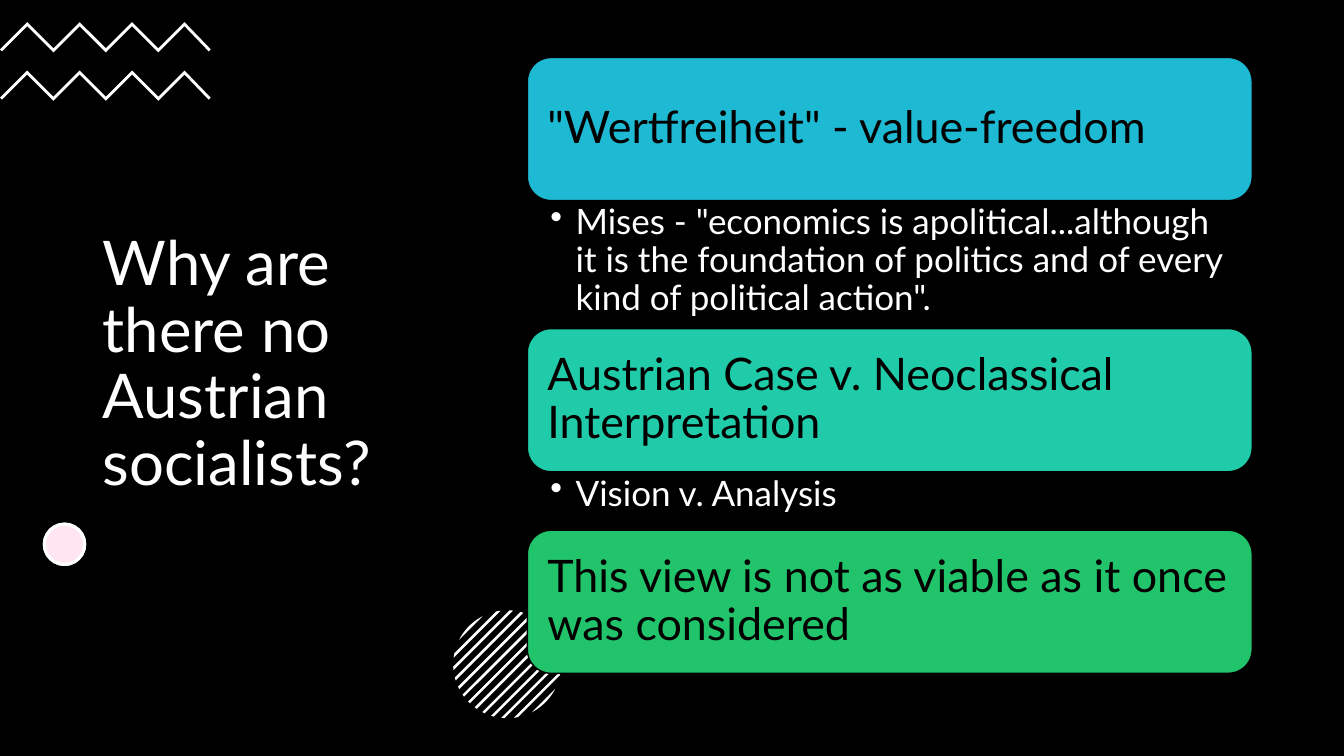
from dataclasses import dataclass
from math import sqrt

from lxml import etree
from pptx import Presentation
from pptx.dml.color import RGBColor
from pptx.enum.shapes import MSO_SHAPE
from pptx.enum.text import MSO_ANCHOR, PP_ALIGN
from pptx.oxml.ns import qn
from pptx.util import Inches, Pt

ELLIPSE = MSO_SHAPE.OVAL
ROUNDED = MSO_SHAPE.ROUNDED_RECTANGLE
TOP = MSO_ANCHOR.TOP
MIDDLE = MSO_ANCHOR.MIDDLE
LEFT = PP_ALIGN.LEFT


@dataclass(frozen=True)
class Theme:
    """Colours, font and type sizes of the slide."""
    font: str = "Lato"
    black: str = "000000"
    white: str = "FFFFFF"
    pink: str = "FF80BD"
    cards: tuple = ("1EB9D3", "20CBA9", "21C46B")
    title_size: int = 44
    card_size: int = 32
    detail_size: int = 25


def write_text(shape, text, size, color, font, anchor=MIDDLE, insets=(0.1, 0.05, 0.1, 0.05), bullet=False):
    """Fill a shape with one formatted paragraph."""
    frame = shape.text_frame
    frame.word_wrap = True
    frame.vertical_anchor = anchor
    frame.margin_left, frame.margin_top, frame.margin_right, frame.margin_bottom = map(Inches, insets)
    paragraph = frame.paragraphs[0]
    paragraph.alignment = LEFT
    paragraph.line_spacing = 0.9
    run = paragraph.add_run()
    run.text = text
    run.font.name = font
    run.font.size = Pt(size)
    run.font.color.rgb = RGBColor.from_string(color)
    if bullet:
        properties = paragraph._p.get_or_add_pPr()
        properties.set("marL", str(Inches(0.25)))
        properties.set("indent", str(-Inches(0.25)))
        etree.SubElement(properties, qn("a:buChar"), char="•")


class SlideBuilder:
    """Draws the kinds of element used on the slide."""

    def __init__(self, slide, theme):
        """Keep the slide and theme and paint the background."""
        self.slide = slide
        self.theme = theme
        background = slide.background.fill
        background.solid()
        background.fore_color.rgb = RGBColor.from_string(theme.black)

    def paint(self, shape, fill, line=None, width=1, opacity=100):
        """Set the fill and outline of a shape."""
        shape.shadow.inherit = False
        shape.fill.solid()
        shape.fill.fore_color.rgb = RGBColor.from_string(fill)
        if opacity < 100:
            color = shape.fill._xPr.find(qn("a:solidFill"))[0]
            etree.SubElement(color, qn("a:alpha"), val=str(opacity * 1000))
        if line:
            shape.line.color.rgb = RGBColor.from_string(line)
            shape.line.width = Pt(width)
        else:
            shape.line.fill.background()

    def text(self, box, text, size, **text_format):
        """Add a white text box."""
        shape = self.slide.shapes.add_textbox(*map(Inches, box))
        write_text(shape, text, size, self.theme.white, self.theme.font, **text_format)

    def card(self, box, text, fill):
        """Add a rounded heading card."""
        shape = self.slide.shapes.add_shape(ROUNDED, *map(Inches, box))
        self.paint(shape, fill, self.theme.black)
        write_text(shape, text, self.theme.card_size, self.theme.black, self.theme.font, insets=(0.13,) * 4)

    def dot(self, box, fill, opacity=100):
        """Add a circle with a white outline."""
        shape = self.slide.shapes.add_shape(ELLIPSE, *map(Inches, box))
        self.paint(shape, fill, self.theme.white, 2.25, opacity)

    def polygon(self, points):
        """Add a closed white outline."""
        corners = [(Inches(x), Inches(y)) for x, y in points]
        builder = self.slide.shapes.build_freeform(*corners[0], scale=1.0)
        builder.add_line_segments(corners[1:], close=True)
        self.paint(builder.convert_to_shape(), self.theme.white)

    def zigzag(self, top):
        """Add a band of four peaks."""
        def edge(inset, end, drop):
            middle = [(0.01 + 0.26 * i, top + drop + (0 if i % 2 else 0.26)) for i in range(1, 8)]
            return [(inset, top + end), *middle, (2.09 - inset, top + end)]
        self.polygon(edge(0, 0.27, 0) + edge(0.02, 0.29, 0.04)[::-1])

    def striped_circle(self, center_x, center_y, radius):
        """Add diagonal stripes clipped to a circle."""
        limit = radius * sqrt(2)
        pitch, half_width, steps = 0.123, 0.018, 6
        for stripe in range(-6, 7):
            start = max(-limit, stripe * pitch - half_width)
            end = min(limit, stripe * pitch + half_width)
            upper, lower = [], []
            for step in range(steps + 1):
                shift = (start + (end - start) * step / steps) / 2
                reach = sqrt(max(0, radius ** 2 / 2 - shift ** 2))
                upper.append((center_x + shift + reach, center_y + shift - reach))
                lower.append((center_x + shift - reach, center_y + shift + reach))
            self.polygon(upper + lower[::-1])


def main():
    """Build and save the slide."""
    presentation = Presentation()
    presentation.slide_width = Inches(13.33)
    presentation.slide_height = Inches(7.5)
    theme = Theme()
    builder = SlideBuilder(presentation.slides.add_slide(presentation.slide_layouts[6]), theme)

    builder.text((0.92, 1.31, 3.5, 4.63), "Why are there no Austrian socialists?", theme.title_size)
    for top in (0.22, 0.7):
        builder.zigzag(top)
    for color, opacity in ((theme.white, 100), (theme.pink, 20)):
        builder.dot((0.44, 5.2, 0.4, 0.4), color, opacity)
    builder.striped_circle(5.03, 6.59, 0.535)

    sections = (
        ('"Wertfreiheit" - value-freedom',
         'Mises - "economics is apolitical...although it is the foundation of politics '
         'and of every kind of political action".', 1.27),
        ("Austrian Case v. Neoclassical Interpretation", "Vision v. Analysis", 0.58),
        ("This view is not as viable as it once was considered", None, 0),
    )
    left, top, width, card_height = 5.23, 0.57, 7.19, 1.42
    for (heading, detail, detail_height), fill in zip(sections, theme.cards):
        builder.card((left, top, width, card_height), heading, fill)
        top += card_height
        if detail:
            builder.text((left, top, width, detail_height), detail, theme.detail_size,
                         anchor=TOP, insets=(0.23, 0.04, 0.25, 0.04), bullet=True)
        top += detail_height

    presentation.save("out.pptx")


if __name__ == "__main__":
    main()
